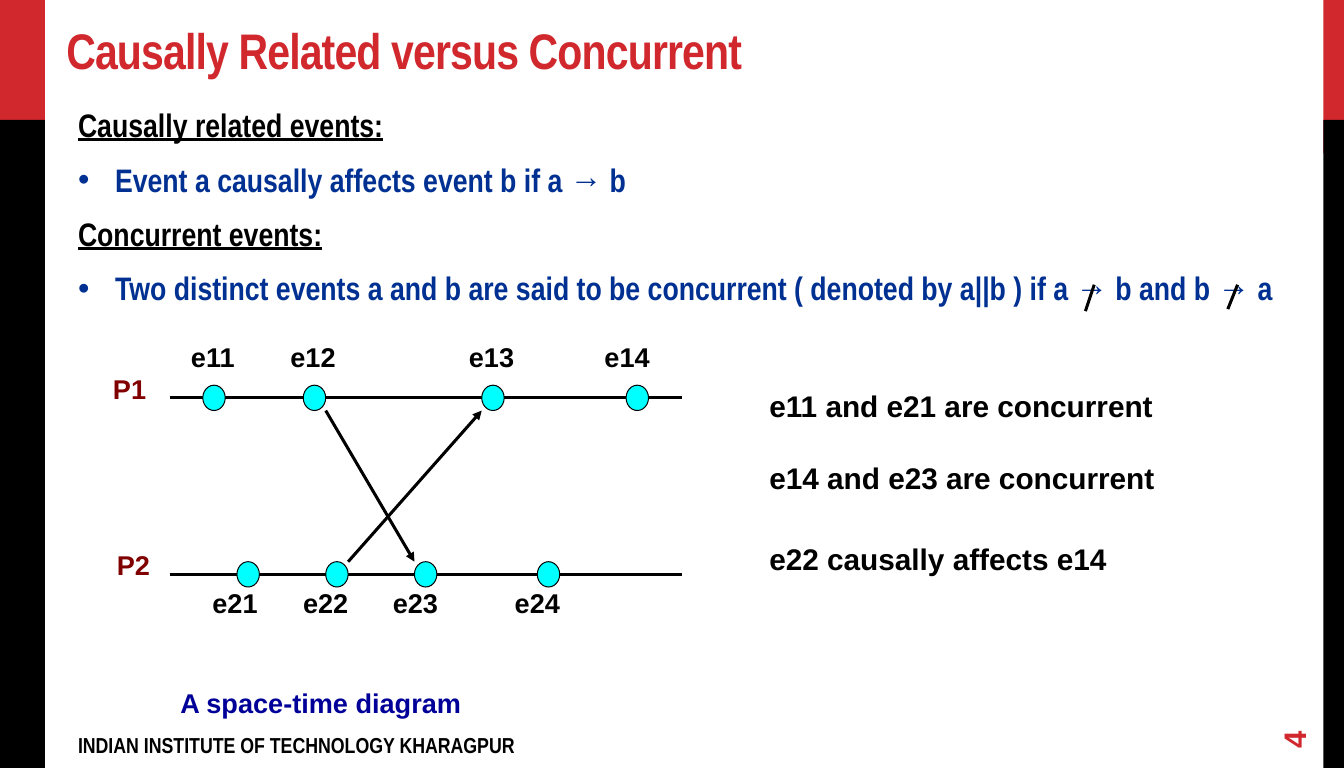
from dataclasses import dataclass

from lxml.etree import SubElement
from pptx import Presentation
from pptx.dml.color import RGBColor
from pptx.enum.shapes import MSO_CONNECTOR, MSO_SHAPE
from pptx.enum.text import MSO_ANCHOR, PP_ALIGN
from pptx.oxml.ns import qn
from pptx.util import Inches, Pt


@dataclass(frozen=True)
class Theme:
    red: str = "D1282E"
    black: str = "000000"
    blue: str = "003192"
    navy: str = "000099"
    maroon: str = "800000"
    cyan: str = "00FFFF"
    narrow: str = "Arial Narrow"
    sans: str = "Arial"
    title: float = 36.9
    body: float = 24
    number: float = 23
    note: float = 22
    label: float = 20
    footer: float = 16


T = Theme()
prs = Presentation()
prs.slide_width, prs.slide_height = Pt(992.25), Pt(567)
s = prs.slides.add_slide(prs.slide_layouts[1])


def write(sp, box, text, size, color, font=T.sans, inset=(0.1, 0.05)):
    """Place a text shape and add one bold run to its last paragraph."""
    sp.left, sp.top, sp.width, sp.height = (Inches(v) for v in box)
    tf = sp.text_frame
    tf.word_wrap = True
    tf.margin_left = tf.margin_right = Inches(inset[0])
    tf.margin_top = tf.margin_bottom = Inches(inset[1])
    p = tf.paragraphs[-1]
    p.alignment = PP_ALIGN.LEFT
    r = p.add_run()
    r.text = text
    r.font.size, r.font.name, r.font.bold = Pt(size), font, True
    r.font.color.rgb = RGBColor.from_string(color)
    return r


def line(start, end, arrow=False):
    c = s.shapes.add_connector(MSO_CONNECTOR.STRAIGHT, *(Inches(v) for v in start + end))
    c.line.color.rgb = RGBColor.from_string(T.black)
    c.line.width = Pt(2.25)
    if arrow:
        SubElement(c.line._get_or_add_ln(), qn("a:tailEnd"), type="triangle")
    SubElement(c._element.spPr, qn("a:effectLst"))


# Side bars: red block above a black one on each edge
for x, w in ((13.57, 0.22), (0, 0.46)):
    for y, h, color in ((0, 1.57, T.red), (1.23, 6.65, T.black)):
        bar = s.shapes.add_shape(MSO_SHAPE.RECTANGLE, Inches(x), Inches(y), Inches(w), Inches(h))
        bar.shadow.inherit = False
        bar.fill.solid()
        bar.fill.fore_color.rgb = RGBColor.from_string(color)
        bar.line.fill.background()

# Title, footer and slide number
WIDE = (0.11, 0.06)
title = s.shapes.title
r = write(title, (0.57, 0.18, 12.86, 0.7), "Causally Related versus Concurrent",
          T.title, T.red, T.narrow, WIDE)
r.font._element.set("spc", "-66")
title.text_frame.vertical_anchor = MSO_ANCHOR.BOTTOM

footer = s.shapes.add_textbox(0, 0, 0, 0)
write(footer, (0.69, 7.44, 8.38, 0.34), "INDIAN INSTITUTE OF TECHNOLOGY KHARAGPUR",
      T.footer, T.black, T.narrow, WIDE)

number = s.shapes.add_textbox(0, 0, 0, 0)
write(number, (12.86, 7.21, 0.81, 0.34), "4", T.number, T.red, T.sans, WIDE)
number.rotation = 270
number.text_frame.vertical_anchor = MSO_ANCHOR.MIDDLE

# Definitions: underlined headings, each with one bullet
definitions = [
    ("Causally related events:", True),
    ("Event a causally affects event b if a → b", False),
    ("Concurrent events:", True),
    ("Two distinct events a and b are said to be concurrent ( denoted by a||b ) "
     "if a → b and b → a", False),
]
body = s.placeholders[1]
for i, (text, heading) in enumerate(definitions):
    if i:
        body.text_frame.add_paragraph()
    r = write(body, (0.69, 1.02, 12.54, 2.5), text, T.body,
              T.black if heading else T.blue, T.narrow, WIDE)
    r.font.underline = heading
    p = body.text_frame.paragraphs[-1]
    p.space_before, p.space_after = Pt(4.5), Pt(6.8)
    pPr = p._p.get_or_add_pPr()
    indent = 0 if heading else Inches(0.38)
    pPr.set("marL", str(indent))
    pPr.set("indent", str(-indent))
    if heading:
        SubElement(pPr, qn("a:buNone"))
    else:
        SubElement(pPr, qn("a:buChar"), char="•")

# Strokes that negate the last two arrows
line((11.22, 2.92), (11.13, 3.19))
line((12.69, 2.92), (12.59, 3.17))

# Space-time diagram: process name, its place, line y, label y, (event, dot x, label x)
DOT_W, DOT_H = 0.23, 0.26
processes = [
    ("P1", 1.06, 3.77, 4.08, 3.44,
     [("e11", 2.08, 1.86), ("e12", 3.11, 2.88), ("e13", 4.94, 4.71), ("e14", 6.42, 6.1)]),
    ("P2", 1.1, 5.57, 5.89, 5.96,
     [("e21", 2.43, 2.08), ("e22", 3.34, 3.01), ("e23", 4.25, 3.93), ("e24", 5.51, 5.18)]),
]
dots = {}
for name, name_x, name_y, line_y, label_y, events in processes:
    write(s.shapes.add_textbox(0, 0, 0, 0), (name_x, name_y, 0.63, 0.53), name, T.label, T.maroon)
    line((1.74, line_y), (6.99, line_y))
    for event, x, label_x in events:
        y = line_y - DOT_H / 2
        dots[event] = (x, y)
        dot = s.shapes.add_shape(MSO_SHAPE.OVAL, Inches(x), Inches(y), Inches(DOT_W), Inches(DOT_H))
        dot.shadow.inherit = False
        dot.fill.solid()
        dot.fill.fore_color.rgb = RGBColor.from_string(T.cyan)
        dot.line.color.rgb = RGBColor.from_string(T.black)
        dot.line.width = Pt(0.75)
        write(s.shapes.add_textbox(0, 0, 0, 0), (label_x, label_y, 0.77, 0.53),
              event, T.label, T.black)

# Messages run between the facing corners of two events
for sender, receiver in (("e12", "e23"), ("e22", "e13")):
    (x1, y1), (x2, y2) = dots[sender], dots[receiver]
    down = y2 > y1
    line((x1 + DOT_W, y1 + DOT_H * down), (x2, y2 + DOT_H * (not down)), arrow=True)

# Conclusions and caption
for y, text in ((3.93, "e11 and e21 are concurrent"),
                (4.67, "e14 and e23 are concurrent"),
                (5.5, "e22 causally affects e14")):
    write(s.shapes.add_textbox(0, 0, 0, 0), (7.79, y, 4.85, 0.57), text, T.note, T.black)
write(s.shapes.add_textbox(0, 0, 0, 0), (1.75, 6.99, 3.58, 0.53),
      "A space-time diagram", T.label, T.navy)

prs.save("out.pptx")
